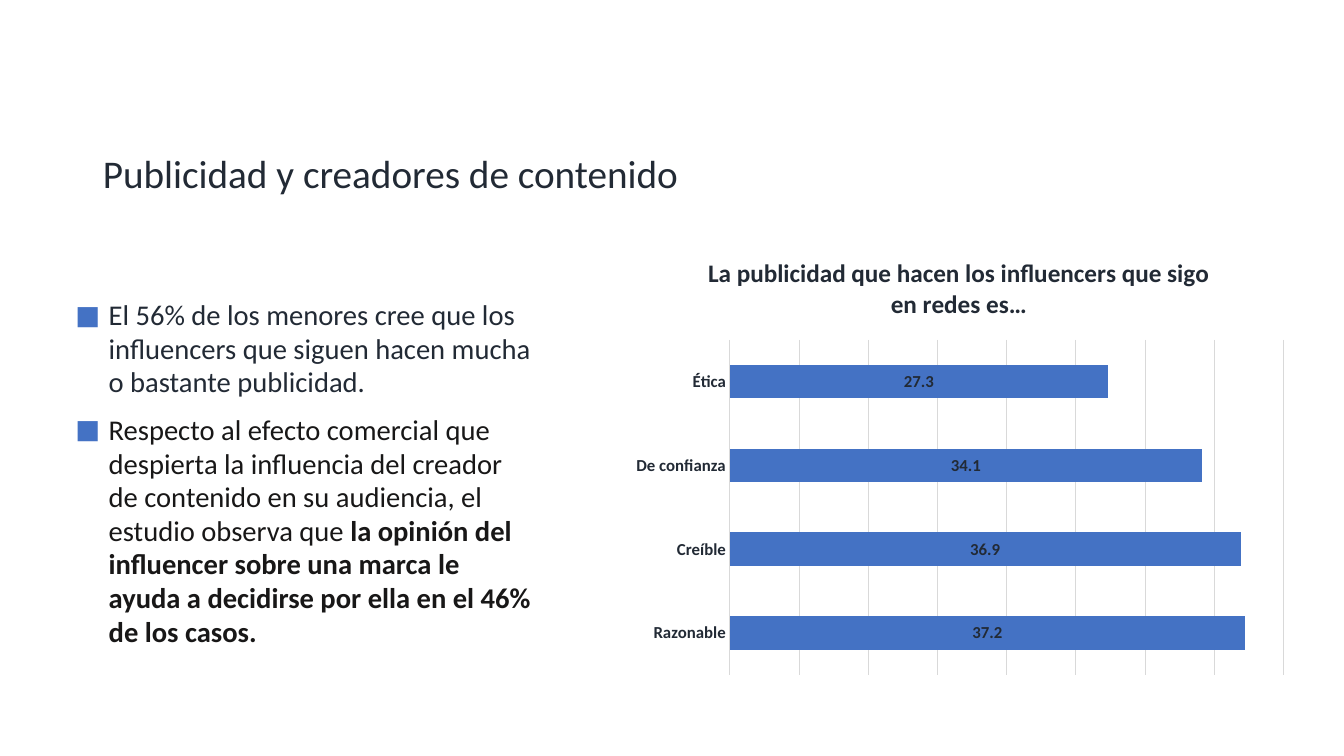
"""Build a slide on advertising and content creators, with two points and a bar chart."""
from dataclasses import dataclass

from lxml.etree import SubElement
from pptx import Presentation
from pptx.chart.data import CategoryChartData
from pptx.dml.color import RGBColor
from pptx.enum.chart import XL_CHART_TYPE, XL_LABEL_POSITION, XL_TICK_MARK
from pptx.enum.text import MSO_ANCHOR, PP_ALIGN
from pptx.oxml import parse_xml
from pptx.oxml.ns import nsdecls, qn
from pptx.util import Inches, Pt

FONT = "Calibri"
HUES = {"ink": "222A35", "dark": "181717", "blue": "4472C4", "grid": "D9D9D9"}


@dataclass
class Point:
    text: str
    hue: str
    bold: str = ""


@dataclass
class Bar:
    name: str
    value: float


POINTS = [
    Point("El 56% de los menores cree que los influencers que siguen hacen mucha o bastante publicidad.", "ink"),
    Point("Respecto al efecto comercial que despierta la influencia del creador de contenido "
          "en su audiencia, el estudio observa que ", "dark",
          "la opinión del influencer sobre una marca le ayuda a decidirse por ella en el 46% de los casos."),
]
BARS = [Bar("Razonable", 37.2), Bar("Creíble", 36.9), Bar("De confianza", 34.1), Bar("Ética", 27.3)]


def color(hue: str) -> RGBColor:
    return RGBColor.from_string(HUES[hue])


def style(font, size: float, hue: str = "ink", bold: bool = False) -> None:
    font.name, font.size, font.bold = FONT, Pt(size), bold
    font.color.rgb = color(hue)


def rule(line) -> None:
    line.color.rgb = color("grid")
    line.width = Pt(0.75)


def bullet(para) -> None:
    props = para._p.get_or_add_pPr()
    props.set("marL", str(Inches(0.33)))
    props.set("indent", str(-Inches(0.33)))
    tint = SubElement(props, qn("a:buClr"))
    SubElement(tint, qn("a:srgbClr"), val=HUES["blue"])
    SubElement(props, qn("a:buSzPct"), val="92000")
    SubElement(props, qn("a:buFont"), typeface=FONT)
    SubElement(props, qn("a:buChar"), char="■")


def add_title(slide) -> None:
    title = slide.shapes.title
    title.left, title.top = Inches(0.92), Inches(1.02)
    title.width, title.height = Inches(11.5), Inches(1.45)
    frame = title.text_frame
    frame.text = "Publicidad y creadores de contenido"
    frame.vertical_anchor = MSO_ANCHOR.MIDDLE
    para = frame.paragraphs[0]
    para.alignment, para.line_spacing = PP_ALIGN.LEFT, 0.9
    style(para.runs[0].font, 28)


def add_points(slide, points: list[Point]) -> None:
    box = slide.shapes.add_textbox(Inches(0.65), Inches(2.93), Inches(4.77), Inches(3.85))
    frame = box.text_frame
    frame.word_wrap = True
    frame.vertical_anchor = MSO_ANCHOR.MIDDLE
    frame.margin_top, frame.margin_bottom = 0, Inches(0.31)
    for place, point in enumerate(points):
        para = frame.add_paragraph() if place else frame.paragraphs[0]
        bullet(para)
        para.line_spacing = 0.98
        para.space_before = Pt(4 if place else 0)
        para.space_after = Pt(6)
        for text, bold in ((point.text, False), (point.bold, True)):
            if text:
                run = para.add_run()
                run.text = text
                style(run.font, 20.4, point.hue, bold)


def place_plot(chart) -> None:
    area = chart._chartSpace.chart.plotArea
    for old in area.findall(qn("c:layout")):
        area.remove(old)
    spots = "".join(f'<c:{key} val="{val}"/>' for key, val in (
        ("layoutTarget", "inner"), ("xMode", "edge"), ("yMode", "edge"),
        ("x", 0.158), ("y", 0.23), ("w", 0.827), ("h", 0.749)))
    area.insert(0, parse_xml(
        f'<c:layout {nsdecls("c")}><c:manualLayout>{spots}</c:manualLayout></c:layout>'))


def add_bars(slide, bars: list[Bar]) -> None:
    data = CategoryChartData()
    data.categories = [bar.name for bar in bars]
    data.add_series("Series 1", [bar.value for bar in bars])
    chart = slide.shapes.add_chart(
        XL_CHART_TYPE.BAR_STACKED, Inches(6.19), Inches(2.35), Inches(6.64), Inches(4.44), data).chart
    style(chart.font, 10, bold=True)
    chart.has_legend = False
    chart.has_title = True
    frame = chart.chart_title.text_frame
    frame.text = "La publicidad que hacen los influencers que sigo en redes es…"
    style(frame.paragraphs[0].runs[0].font, 18, bold=True)
    chart.chart_title.include_in_layout = False

    names = chart.category_axis
    names.major_tick_mark = names.minor_tick_mark = XL_TICK_MARK.NONE
    style(names.tick_labels.font, 12, bold=True)
    rule(names.format.line)
    scale = chart.value_axis
    scale.minimum_scale, scale.maximum_scale, scale.major_unit = 0, 40, 5
    scale.has_major_gridlines = True
    rule(scale.major_gridlines.format.line)
    scale.visible = False

    plot = chart.plots[0]
    plot.gap_width, plot.overlap = 150, 100
    plot.vary_by_categories = False
    series = plot.series[0]
    series.format.fill.solid()
    series.format.fill.fore_color.rgb = color("blue")
    labels = series.data_labels
    labels.show_value = True
    labels.position = XL_LABEL_POSITION.CENTER
    style(labels.font, 12, bold=True)
    place_plot(chart)


def main() -> None:
    deck = Presentation()
    deck.slide_width, deck.slide_height = Inches(13.33), Inches(7.5)
    slide = deck.slides.add_slide(deck.slide_layouts[5])
    add_title(slide)
    add_points(slide, POINTS)
    add_bars(slide, BARS)
    deck.save("out.pptx")


if __name__ == "__main__":
    main()
